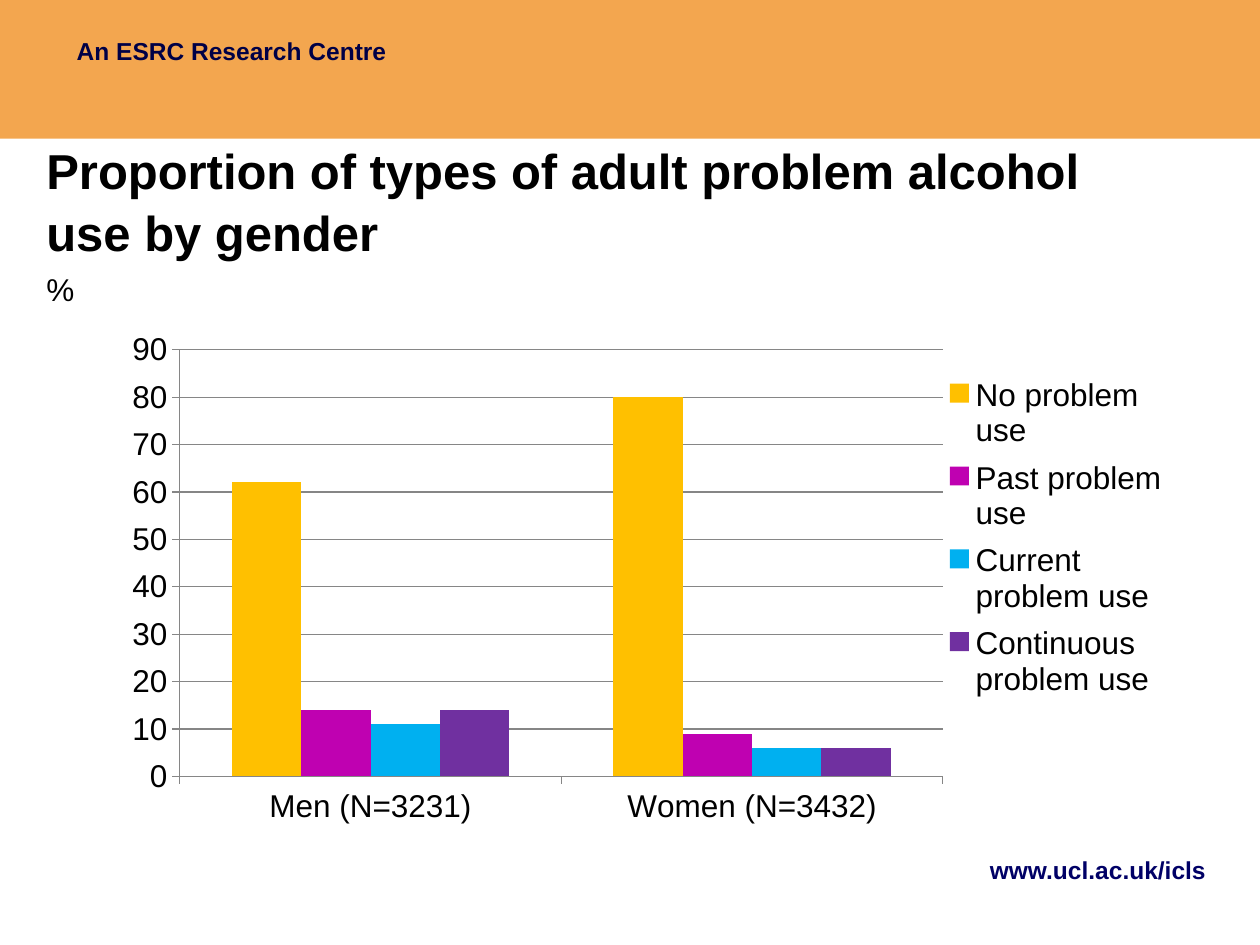
from lxml import etree
from pptx import Presentation
from pptx.chart.data import CategoryChartData
from pptx.dml.color import RGBColor
from pptx.enum import chart as charts, shapes, text
from pptx.oxml.ns import qn
from pptx.util import Inches, Pt

ORANGE = RGBColor(0xF3, 0xA6, 0x4F)
NAVY = RGBColor(0x00, 0x00, 0x46)
LINK_BLUE = RGBColor(0x00, 0x00, 0x66)
BLACK = RGBColor(0x00, 0x00, 0x00)
GREY = RGBColor(0x86, 0x86, 0x86)
FONT = "Arial"

CATEGORIES = ["Men (N=3231)", "Women (N=3432)"]
SERIES = [
    ("No problem use", (62, 80), RGBColor(0xFF, 0xC0, 0x00)),
    ("Past problem use", (14, 9), RGBColor(0xBF, 0x01, 0xB1)),
    ("Current problem use", (11, 6), RGBColor(0x00, 0xB0, 0xF0)),
    ("Continuous problem use", (14, 6), RGBColor(0x70, 0x30, 0xA0)),
]


def style_font(font, size, color, bold=False):
    """Apply the slide typeface with a size, colour and weight."""
    for name, value in {"name": FONT, "size": Pt(size), "bold": bold}.items():
        setattr(font, name, value)
    font.color.rgb = color


def add_label(slide, box, wording, size, color, bold=False, **formats):
    """Add a one-paragraph text box in the given box."""
    frame = slide.shapes.add_textbox(*map(Inches, box)).text_frame
    frame.word_wrap = True
    frame.vertical_anchor = formats.pop("anchor", text.MSO_ANCHOR.TOP)
    paragraph = frame.paragraphs[0]
    paragraph.text = wording
    for name, value in formats.items():
        setattr(paragraph, name, value)
    style_font(paragraph.runs[0].font, size, color, bold)


def add_header(slide, box):
    """Draw the coloured band with the centre's description."""
    left, top, width, height = box
    band = slide.shapes.add_shape(shapes.MSO_SHAPE.RECTANGLE, *map(Inches, box))
    band.shadow.inherit = False
    band.fill.solid()
    band.fill.fore_color.rgb = ORANGE
    band.line.fill.background()
    add_label(slide, (left + 0.51, top + 0.24, 3.62, 0.33),
              "An ESRC Research Centre", 14, NAVY, True)


def set_layout(element, box, inner=False):
    """Place a chart part at fractions of the chart area."""
    layout = element.find(qn("c:layout"))
    if layout is None:
        layout = etree.Element(qn("c:layout"))
        element.insert(1 if element.tag == qn("c:legend") else 0, layout)
    manual = etree.SubElement(layout, qn("c:manualLayout"))
    settings = [("layoutTarget", "inner")] if inner else []
    settings += [("xMode", "edge"), ("yMode", "edge"), *zip("xywh", box)]
    for name, value in settings:
        etree.SubElement(manual, qn(f"c:{name}")).set("val", str(value))


def add_alcohol_chart(slide, box):
    """Draw the clustered columns with axes and legend."""
    data = CategoryChartData()
    data.categories = CATEGORIES
    for name, values, _ in SERIES:
        data.add_series(name, values)
    chart = slide.shapes.add_chart(
        charts.XL_CHART_TYPE.COLUMN_CLUSTERED, *map(Inches, box), data).chart
    style_font(chart.font, 18, BLACK)
    chart.has_title = False

    plot = chart.plots[0]
    plot.gap_width, plot.overlap, plot.vary_by_categories = 150, 0, False
    for series, (_, _, color) in zip(plot.series, SERIES):
        series.format.fill.solid()
        series.format.fill.fore_color.rgb = color

    scale = chart.value_axis
    scale.minimum_scale, scale.maximum_scale, scale.major_unit = 0, 90, 10
    scale.has_major_gridlines = True
    for axis in (scale, chart.category_axis):
        axis.major_tick_mark = charts.XL_TICK_MARK.OUTSIDE
        axis.format.line.color.rgb = GREY
    scale.major_gridlines.format.line.color.rgb = GREY

    chart.has_legend = True
    chart.legend.position = charts.XL_LEGEND_POSITION.RIGHT
    chart.legend.include_in_layout = False
    plot_area = chart.element.find(".//" + qn("c:plotArea"))
    set_layout(plot_area, (0.07, 0.05, 0.71, 0.82), inner=True)
    set_layout(chart.element.find(".//" + qn("c:legend")), (0.78, 0.08, 0.21, 0.66))


def main():
    """Build and save the slide."""
    presentation = Presentation()
    presentation.slide_width, presentation.slide_height = Inches(10), Inches(7.5)
    slide = presentation.slides.add_slide(presentation.slide_layouts[6])
    add_header(slide, (0, 0, 10, 1.1))
    add_label(slide, (0.27, 1.07, 9.06, 1.02),
              "Proportion of types of adult problem alcohol use by gender",
              28, BLACK, True, anchor=text.MSO_ANCHOR.MIDDLE, line_spacing=1.05)
    add_alcohol_chart(slide, (0.83, 2.57, 8.53, 4.13))
    add_label(slide, (6.5, 6.74, 3.17, 0.52), "www.ucl.ac.uk/icls",
              14, LINK_BLUE, True, alignment=text.PP_ALIGN.RIGHT)
    add_label(slide, (0.27, 2.09, 0.45, 0.4), "%", 18, BLACK)
    presentation.save("out.pptx")


if __name__ == "__main__":
    main()
